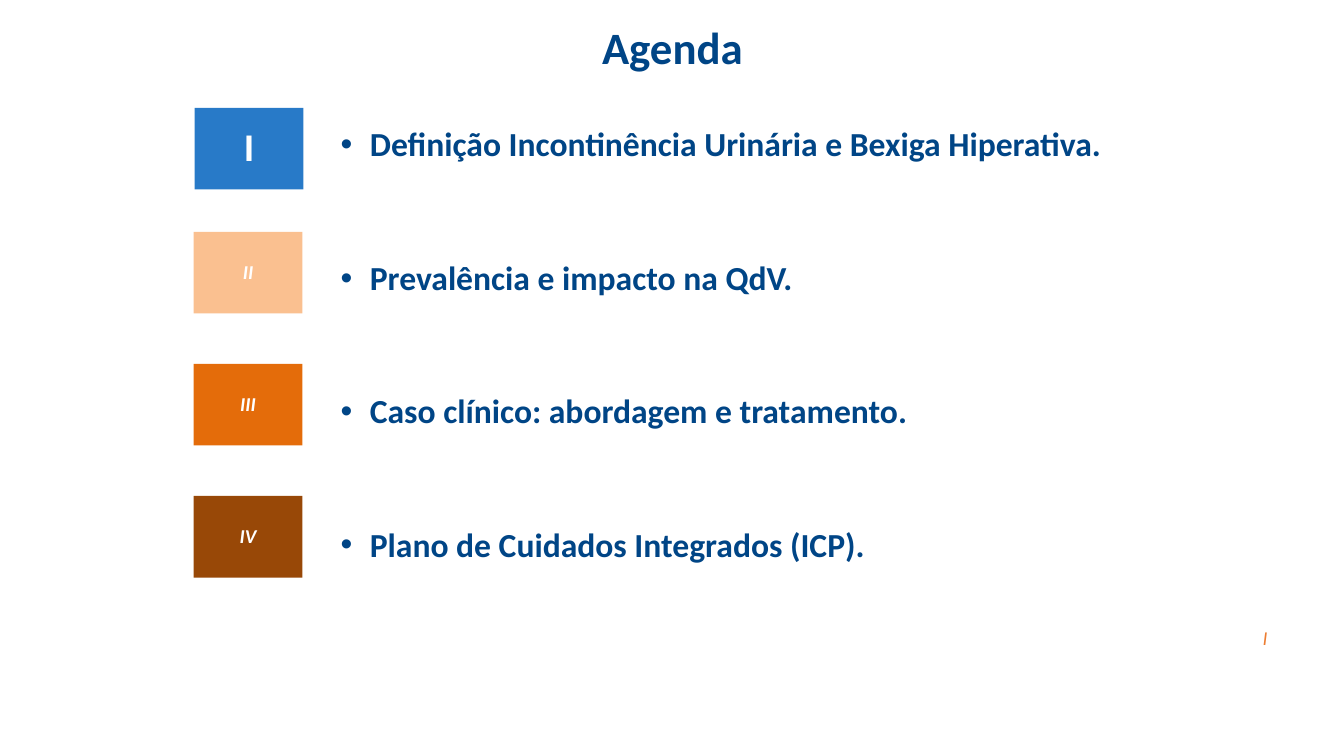
from lxml import etree
from pptx import Presentation
from pptx.dml.color import RGBColor
from pptx.enum.shapes import MSO_SHAPE as Shape
from pptx.enum.text import MSO_ANCHOR as Anchor, PP_ALIGN as Align
from pptx.oxml.ns import qn
from pptx.util import Inches, Pt

NAVY = RGBColor(0x00, 0x45, 0x86)
BLUE = RGBColor(0x28, 0x7A, 0xC8)
PEACH = RGBColor(0xFA, 0xC0, 0x90)
ORANGE = RGBColor(0xE4, 0x6C, 0x0A)
BROWN = RGBColor(0x98, 0x48, 0x07)
ACCENT = RGBColor(0xED, 0x7D, 0x31)
WHITE = RGBColor(0xFF, 0xFF, 0xFF)

TITLE = "Agenda"
TOPICS = [
    "Definição Incontinência Urinária e Bexiga Hiperativa.",
    "Prevalência e impacto na QdV.",
    "Caso clínico: abordagem e tratamento.",
    "Plano de Cuidados Integrados (ICP).",
]
CURRENT_BADGE = ("I", BLUE)
OTHER_BADGES = [("II", PEACH), ("III", ORANGE), ("IV", BROWN)]
PAGE_NUMBER = "I"

BADGE_SIZE = (1.08, 0.81)
BADGE_LEFT, BADGE_TOP, BADGE_PITCH = 1.92, 2.3, 1.31
TOPIC_GAP = 69.4


def write(shape, lines, size, color, bold=True, italic=False,
          align=Align.LEFT, anchor=Anchor.TOP, gap=0, bullets=False):
    frame = shape.text_frame
    frame.word_wrap = True
    frame.vertical_anchor = anchor
    for index, line in enumerate(lines):
        paragraph = frame.add_paragraph() if index else frame.paragraphs[0]
        if bullets:
            properties = paragraph._p.get_or_add_pPr()
            properties.set("marL", str(Inches(0.88)))
            properties.set("indent", str(Inches(-0.29)))
            etree.SubElement(properties, qn("a:buFont"), typeface="Arial")
            etree.SubElement(properties, qn("a:buChar"), char="•")
        paragraph.alignment = align
        paragraph.line_spacing = 0.9
        paragraph.space_before = Pt(gap if index else 0)
        run = paragraph.add_run()
        run.text = line
        font = run.font
        font.name, font.size = "Calibri", Pt(size)
        font.bold, font.italic = bold, italic
        font.color.rgb = color


def add_text(slide, box, lines, **style):
    write(slide.shapes.add_textbox(*map(Inches, box)), lines, **style)


def add_badge(slide, left, top, numeral, fill, **style):
    badge = slide.shapes.add_shape(Shape.RECTANGLE, *map(Inches, (left, top, *BADGE_SIZE)))
    badge.shadow.inherit = False
    badge.fill.solid()
    badge.fill.fore_color.rgb = fill
    badge.line.fill.background()
    write(badge, [numeral], color=WHITE, align=Align.CENTER, anchor=Anchor.MIDDLE, **style)


def main():
    presentation = Presentation()
    presentation.slide_width = Inches(13.33)
    presentation.slide_height = Inches(7.5)
    slide = presentation.slides.add_slide(presentation.slide_layouts[6])

    add_text(slide, (0.67, 0.17, 12, 0.66), [TITLE], size=32, color=NAVY,
             align=Align.CENTER, anchor=Anchor.MIDDLE)
    add_text(slide, (2.69, 1.22, 10.5, 5.02), TOPICS, size=24, color=NAVY,
             gap=TOPIC_GAP, bullets=True)
    add_text(slide, (0, 6.19, 12.67, 0.32), [PAGE_NUMBER], size=14, color=ACCENT,
             bold=False, italic=True, align=Align.RIGHT)
    for row, (numeral, fill) in enumerate(OTHER_BADGES):
        add_badge(slide, BADGE_LEFT, BADGE_TOP + row * BADGE_PITCH, numeral, fill,
                  size=14, italic=True)
    add_badge(slide, 1.93, 1.07, *CURRENT_BADGE, size=28)

    presentation.save("out.pptx")


if __name__ == "__main__":
    main()
